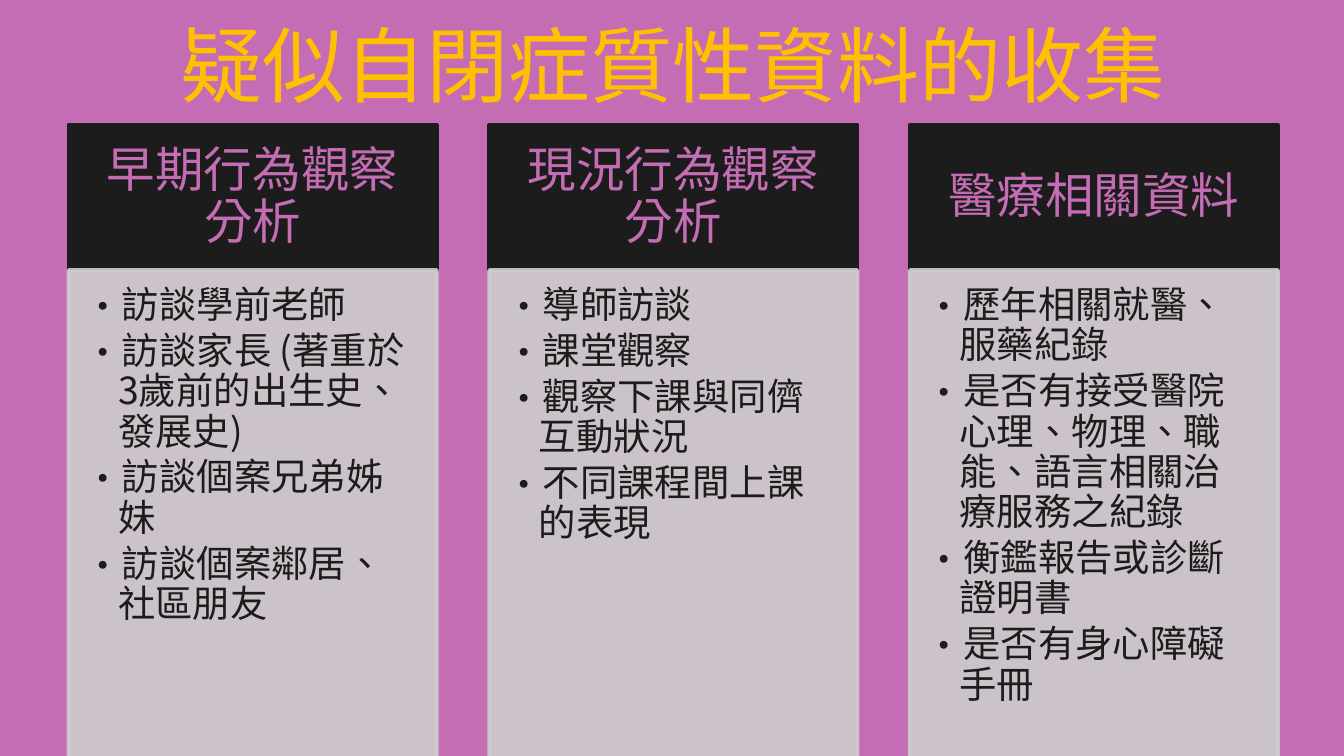
from lxml import etree
from pptx import Presentation
from pptx.dml.color import RGBColor
from pptx.enum.shapes import MSO_SHAPE
from pptx.enum.text import MSO_ANCHOR, MSO_AUTO_SIZE, PP_ALIGN
from pptx.oxml.ns import qn
from pptx.util import Inches, Pt

RECT = MSO_SHAPE.RECTANGLE
TOP, MIDDLE = MSO_ANCHOR.TOP, MSO_ANCHOR.MIDDLE
LEFT, CENTER = PP_ALIGN.LEFT, PP_ALIGN.CENTER
NO_FIT = MSO_AUTO_SIZE.NONE

ORCHID = RGBColor(0xC5, 0x6D, 0xB4)
BLACK = RGBColor(0x1C, 0x1C, 0x1C)
GREY = RGBColor(0xCD, 0xCD, 0xCD)
GOLD = RGBColor(0xFF, 0xC0, 0x00)
FONT = "Noto Sans CJK SC"
COMMA_FONT = "Noto Sans CJK TC"

MARGIN, COLUMN_TOP = 0.51, 0.93
COLUMN_W, COLUMN_STEP = 2.74, 3.13
HEADER_H, BODY_H = 1.08, 4.1

COLUMNS = [
    ("早期行為觀察分析", [
        [("訪談學前老師", FONT)],
        [("訪談家長 (著重於3歲前的出生史、發展史)", FONT)],
        [("訪談個案兄弟姊妹", FONT)],
        [("訪談個案鄰居", FONT), ("、", COMMA_FONT), ("社區朋友", FONT)],
    ]),
    ("現況行為觀察分析", [
        [("導師訪談", FONT)],
        [("課堂觀察", FONT)],
        [("觀察下課與同儕互動狀況", FONT)],
        [("不同課程間上課的表現", FONT)],
    ]),
    ("醫療相關資料", [
        [("歷年相關就醫、服藥紀錄", FONT)],
        [("是否有接受醫院心理、物理、職能、語言相關治療服務之紀錄", FONT)],
        [("衡鑑報告或診斷證明書", FONT)],
        [("是否有身心障礙手冊", FONT)],
    ]),
]


def add_run(p, text, size, color, font=FONT):
    r = p.add_run()
    r.text = text
    r.font.size = Pt(size)
    r.font.color.rgb = color
    r.font.name = font
    rPr = r._r.get_or_add_rPr()
    rPr.set("lang", "zh-TW")
    etree.SubElement(rPr, qn("a:ea"), typeface=font)


def add_bullet(p):
    pPr = p._p.get_or_add_pPr()
    pPr.set("marL", str(Inches(0.25)))
    pPr.set("indent", str(Inches(-0.25)))
    etree.SubElement(pPr, qn("a:buFont"), typeface=FONT)
    etree.SubElement(pPr, qn("a:buChar"), char="•")


def add_panel(s, x, y, w, h, color, insets, anchor):
    sp = s.shapes.add_shape(RECT, Inches(x), Inches(y), Inches(w), Inches(h))
    sp.shadow.inherit = False
    sp.fill.solid()
    sp.fill.fore_color.rgb = color
    sp.line.color.rgb = color
    sp.line.width = Pt(2)
    tf = sp.text_frame
    tf.word_wrap = True
    tf.vertical_anchor = anchor
    tf.margin_left, tf.margin_top, tf.margin_right, tf.margin_bottom = map(Inches, insets)
    return sp


def add_column(s, x, y, w, heading, items):
    header = add_panel(s, x, y, w, HEADER_H, BLACK, (0.2, 0.12, 0.2, 0.12), MIDDLE)
    p = header.text_frame.paragraphs[0]
    p.alignment = CENTER
    p.line_spacing = 0.9
    add_run(p, heading, 26, ORCHID)

    body = add_panel(s, x, y + HEADER_H, w, BODY_H, GREY, (0.12, 0.12, 0.16, 0.17), TOP)
    for clr in body._element.spPr.iter(qn("a:srgbClr")):
        etree.SubElement(clr, qn("a:alpha"), val="90000")
    tf = body.text_frame
    for i, item in enumerate(items):
        p = tf.add_paragraph() if i else tf.paragraphs[0]
        add_bullet(p)
        p.level = 1
        p.alignment = LEFT
        p.line_spacing = 0.9
        p.space_after = Pt(3)
        for text, font in item:
            add_run(p, text, 20, BLACK, font)


def add_title(s, x, y, w, h, text):
    title = s.shapes.title
    title.left, title.top, title.width, title.height = map(Inches, (x, y, w, h))
    tf = title.text_frame
    tf.word_wrap = True
    tf.auto_size = NO_FIT
    tf.vertical_anchor = TOP
    p = tf.paragraphs[0]
    p.alignment = CENTER
    p.line_spacing = 0.9
    add_run(p, text, 44, GOLD)


def main():
    prs = Presentation()
    prs.slide_width = Inches(10)
    prs.slide_height = prs.slide_width * 9 // 16
    s = prs.slides.add_slide(prs.slide_layouts[5])
    s.background.fill.solid()
    s.background.fill.fore_color.rgb = ORCHID
    add_title(s, MARGIN, 0.14, 9, 0.94, "疑似自閉症質性資料的收集")
    for i, (heading, items) in enumerate(COLUMNS):
        add_column(s, MARGIN + i * COLUMN_STEP, COLUMN_TOP, COLUMN_W, heading, items)
    prs.save("out.pptx")


if __name__ == "__main__":
    main()
